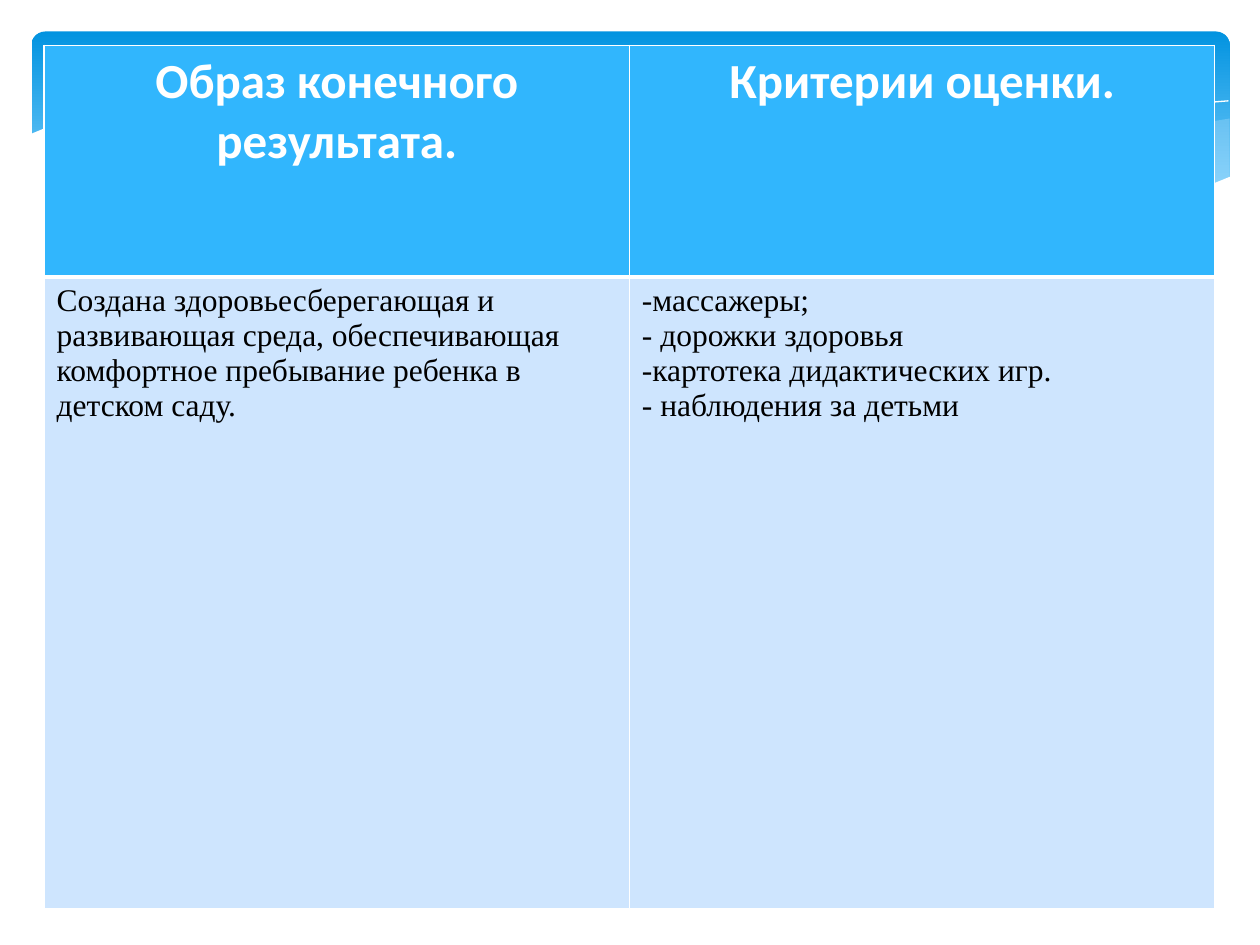
import pptx
import pptx.util
from pptx.dml.color import RGBColor
from pptx.enum.shapes import MSO_SHAPE
from pptx.enum.text import PP_ALIGN
from pptx.oxml.ns import qn
from pptx.util import Inches
from lxml import etree

WHITE = RGBColor(0xFF, 0xFF, 0xFF)
BLACK = RGBColor(0, 0, 0)
DEEP_BLUE = RGBColor(0x02, 0x93, 0xE0)
SKY_BLUE = RGBColor(0x83, 0xD3, 0xFE)
PALE_BLUE = RGBColor(0xC6, 0xE7, 0xFC)
HEADER_BLUE = RGBColor(0x31, 0xB6, 0xFD)
BODY_BLUE = RGBColor(0xCE, 0xE5, 0xFE)

RIGHT_WAVE = [(9.76, 0.94), (9.35, 1.01), (8.91, 1.1), (8.32, 1.25), (7.79, 1.37),
              (7.29, 1.47), (6.61, 1.6), (7.05, 1.65), (7.57, 1.7), (8.03, 1.72),
              (8.44, 1.71), (8.81, 1.67), (9.13, 1.62), (9.42, 1.54), (9.76, 1.41)]
LONG_WAVE = [(8.93, 1.67), (8.37, 1.59), (7.75, 1.49), (7.06, 1.34), (6.29, 1.16),
             (5.69, 1.02), (5.14, 0.92), (4.65, 0.86), (4.2, 0.82), (3.8, 0.8),
             (3.44, 0.8), (3.13, 0.82), (2.86, 0.86), (3.42, 0.94), (4.04, 1.06),
             (4.91, 1.26), (5.66, 1.43), (6.34, 1.56), (6.95, 1.65), (7.48, 1.7),
             (8.07, 1.73), (8.48, 1.72)]
LONG_LINE = [(3.09, 0.9), (3.28, 0.86), (3.63, 0.83), (4.16, 0.81), (4.69, 0.83),
             (5.33, 0.88), (6.08, 0.98), (6.95, 1.14), (7.95, 1.36), (9.07, 1.66)]
RIGHT_LINE = [(6.13, 1.51), (6.53, 1.41), (7.2, 1.24), (8.06, 1.04), (8.66, 0.93),
              (9.1, 0.86), (9.51, 0.82), (9.75, 0.8)]
WHITE_WAVE = [(9.77, 1.4), (9.5, 1.51), (9.2, 1.59), (8.87, 1.66), (8.5, 1.7),
              (8.09, 1.71), (7.61, 1.7), (7.08, 1.65), (6.48, 1.56), (5.79, 1.44),
              (5.03, 1.28), (4.18, 1.07), (3.65, 0.96), (3.16, 0.88), (2.71, 0.82),
              (2.3, 0.79), (1.93, 0.78), (1.61, 0.79), (1.19, 0.82), (0.85, 0.87),
              (0.59, 0.93), (0.4, 1), (0.23, 1.07), (0.23, 2.24), (9.77, 2.24)]

HEADER = {"size": pptx.util.Pt(28), "name": "Calibri", "bold": True}
BODY = {"size": pptx.util.Pt(18), "name": "Times New Roman", "bold": False}


class SlideBuilder:
    def __init__(self, s):
        self.s = s
        self.border = WHITE

    def banner(self, left, top, width, height):
        sp = self.s.shapes.add_shape(MSO_SHAPE.ROUNDED_RECTANGLE, Inches(left),
                                     Inches(top), Inches(width), Inches(height))
        sp.adjustments[0] = 0.07
        sp.shadow.inherit = False
        sp.line.fill.background()
        sp.fill.gradient()
        sp.fill.gradient_angle = 270
        stops = ((0, DEEP_BLUE), (0.9, SKY_BLUE))
        for stop, (position, color) in zip(sp.fill.gradient_stops, stops):
            stop.position = position
            stop.color.rgb = color

    def outline(self, points, close):
        pts = [(Inches(x), Inches(y)) for x, y in points]
        builder = self.s.shapes.build_freeform(*pts[0])
        builder.add_line_segments(pts[1:], close=close)
        sp = builder.convert_to_shape()
        sp.shadow.inherit = False
        return sp

    def wave(self, points, color, opacity=100):
        sp = self.outline(points, True)
        sp.line.fill.background()
        sp.fill.solid()
        sp.fill.fore_color.rgb = color
        if opacity < 100:
            clr = sp.fill._xPr.find(qn("a:solidFill"))[0]
            etree.SubElement(clr, qn("a:alpha"), val=str(opacity * 1000))

    def curve(self, points):
        sp = self.outline(points, False)
        sp.fill.background()
        sp.line.color.rgb = WHITE
        sp.line.width = 0

    def borders(self, cell, widths):
        tcPr = cell._tc.get_or_add_tcPr()
        for i, (side, width) in enumerate(widths.items()):
            ln = etree.Element(qn("a:" + side), w=str(pptx.util.Pt(width)))
            fill = etree.SubElement(ln, qn("a:solidFill"))
            etree.SubElement(fill, qn("a:srgbClr"), val=str(self.border))
            tcPr.insert(i, ln)

    def bullet(self, p, char, font):
        pPr = p._p.get_or_add_pPr()
        pPr.set("marL", "0")
        pPr.set("indent", "0")
        etree.SubElement(pPr, qn("a:buFont"), typeface=font)
        etree.SubElement(pPr, qn("a:buChar"), char=char)

    def cell(self, cell, items, font, color, fill, align, widths):
        cell.fill.solid()
        cell.fill.fore_color.rgb = fill
        self.borders(cell, widths)
        tf = cell.text_frame
        for i, (char, text) in enumerate(items):
            p = tf.add_paragraph() if i else tf.paragraphs[0]
            p.alignment = align
            if char:
                self.bullet(p, char, font["name"])
            r = p.add_run()
            r.text = text
            for name, value in font.items():
                setattr(r.font, name, value)
            r.font.color.rgb = color

    def table(self, left, top, width, row_heights, headers, bodies):
        shape = self.s.shapes.add_table(2, len(headers), Inches(left), Inches(top),
                                        Inches(width), Inches(sum(row_heights)))
        table = shape.table
        for row, height in zip(table.rows, row_heights):
            row.height = Inches(height)
        thin = {"lnL": 1, "lnR": 1, "lnT": 1, "lnB": 1}
        for col, (header, body) in enumerate(zip(headers, bodies)):
            self.cell(table.cell(0, col), [("", header)], HEADER, WHITE, HEADER_BLUE,
                      PP_ALIGN.CENTER, {**thin, "lnB": 3})
            self.cell(table.cell(1, col), body, BODY, BLACK, BODY_BLUE,
                      PP_ALIGN.LEFT, {**thin, "lnT": 3})


def main():
    prs = pptx.Presentation()
    prs.slide_width, prs.slide_height = Inches(10), Inches(7.5)
    slide = SlideBuilder(prs.slides.add_slide(prs.slide_layouts[6]))
    slide.banner(0.25, 0.25, 9.51, 1.56)
    slide.wave(RIGHT_WAVE, PALE_BLUE, 29)
    slide.wave(LONG_WAVE, PALE_BLUE, 40)
    slide.curve(LONG_LINE)
    slide.curve(RIGHT_LINE)
    slide.wave(WHITE_WAVE, WHITE)
    slide.table(
        0.35, 0.36, 9.29, (1.84, 5.01),
        ("Образ конечного результата.", "Критерии оценки."),
        ([("", "Создана здоровьесберегающая и развивающая среда, "
               "обеспечивающая комфортное пребывание ребенка в детском саду.")],
         [("", "-массажеры;"), ("", "- дорожки здоровья"),
          ("-", "картотека дидактических игр."), ("", "- наблюдения за детьми")]))
    prs.save("out.pptx")


if __name__ == "__main__":
    main()
